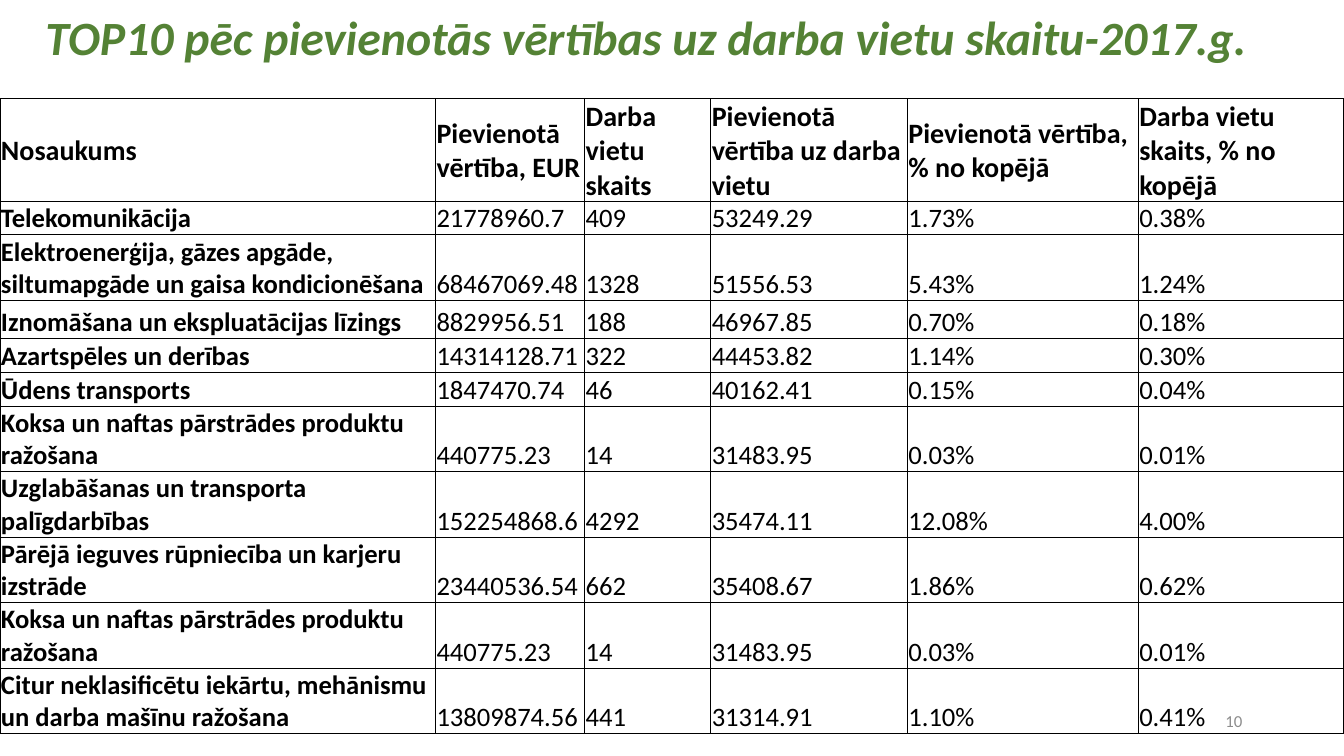
from dataclasses import dataclass

from lxml import etree
from pptx import Presentation
from pptx import util as u
from pptx.dml import color
from pptx.enum import text
from pptx.oxml import ns


@dataclass(frozen=True)
class Theme:
    font: str = "Calibri"
    green: str = "548235"
    black: str = "000000"
    gray: str = "8C8C8C"
    title: float = 34.1
    head: float = 20
    body: float = 19
    page: float = 12


THEME = Theme()
WIDTHS = [4.32, 1.48, 1.25, 1.95, 2.29, 2.04]
HEIGHTS = [1.02, 0.33, 0.65, 0.38, 0.34, 0.33] + [0.65] * 5
HEADS = ["Nosaukums", "Pievienotā vērtība, EUR", "Darba vietu skaits",
         "Pievienotā vērtība uz darba vietu", "Pievienotā vērtība, % no kopējā",
         "Darba vietu skaits, % no kopējā"]
COKE = ["Koksa un naftas pārstrādes produktu ražošana",
        "440775.23", "14", "31483.95", "0.03%", "0.01%"]
SECTORS = [
    ["Telekomunikācija", "21778960.7", "409", "53249.29", "1.73%", "0.38%"],
    ["Elektroenerģija, gāzes apgāde, siltumapgāde un gaisa kondicionēšana",
     "68467069.48", "1328", "51556.53", "5.43%", "1.24%"],
    ["Iznomāšana un ekspluatācijas līzings",
     "8829956.51", "188", "46967.85", "0.70%", "0.18%"],
    ["Azartspēles un derības", "14314128.71", "322", "44453.82", "1.14%", "0.30%"],
    ["Ūdens transports", "1847470.74", "46", "40162.41", "0.15%", "0.04%"],
    COKE,
    ["Uzglabāšanas un transporta palīgdarbības",
     "152254868.6", "4292", "35474.11", "12.08%", "4.00%"],
    ["Pārējā ieguves rūpniecība un karjeru izstrāde",
     "23440536.54", "662", "35408.67", "1.86%", "0.62%"],
    COKE,
    ["Citur neklasificētu iekārtu, mehānismu un darba mašīnu ražošana",
     "13809874.56", "441", "31314.91", "1.10%", "0.41%"],
]


def add_run(para, words, size, tint, bold=False, italic=False):
    run = para.add_run()
    run.text = words
    font = run.font
    font.name, font.size = THEME.font, u.Pt(size)
    font.bold, font.italic = bold, italic
    font.color.rgb = color.RGBColor.from_string(tint)


def add_title(slide, words):
    title = slide.shapes.title
    title.left, title.top = u.Inches(0.35), u.Inches(0.15)
    title.width, title.height = u.Inches(12.39), u.Inches(0.84)
    frame = title.text_frame
    frame.auto_size = text.MSO_AUTO_SIZE.NONE
    frame.vertical_anchor = text.MSO_ANCHOR.TOP
    frame.margin_top = u.Inches(0.08)
    para = frame.paragraphs[0]
    para.alignment = text.PP_ALIGN.JUSTIFY
    para.line_spacing = 0.7
    add_run(para, words, THEME.title, THEME.green, bold=True, italic=True)


def add_page(slide, number):
    box = slide.shapes.add_textbox(
        u.Inches(9.42), u.Inches(6.95), u.Inches(3), u.Inches(0.4))
    frame = box.text_frame
    frame.word_wrap = True
    frame.vertical_anchor = text.MSO_ANCHOR.MIDDLE
    para = frame.paragraphs[0]
    para.alignment = text.PP_ALIGN.RIGHT
    add_run(para, number, THEME.page, THEME.gray)


def add_edges(cell):
    """Draw a thin line on all four sides; lines must precede the fill."""
    props = cell._tc.get_or_add_tcPr()
    for spot, side in enumerate(("lnL", "lnR", "lnT", "lnB")):
        line = etree.Element(ns.qn(f"a:{side}"), w=str(u.Pt(1)))
        fill = etree.SubElement(line, ns.qn("a:solidFill"))
        etree.SubElement(fill, ns.qn("a:srgbClr"), val=THEME.black)
        props.insert(spot, line)


def fill_cell(cell, words, size, bold, anchor):
    cell.margin_left = cell.margin_right = cell.margin_top = u.Inches(0.01)
    cell.margin_bottom = 0
    cell.vertical_anchor = anchor
    cell.fill.background()
    add_edges(cell)
    add_run(cell.text_frame.paragraphs[0], words, size, THEME.black, bold)


def add_grid(slide):
    rows = [HEADS] + SECTORS
    table = slide.shapes.add_table(
        len(rows), len(HEADS), 0, u.Inches(0.98),
        u.Inches(sum(WIDTHS)), u.Inches(sum(HEIGHTS))).table
    table.first_row = table.horz_banding = False
    for col, width in zip(table.columns, WIDTHS):
        col.width = u.Inches(width)
    for r, row in enumerate(rows):
        table.rows[r].height = u.Inches(HEIGHTS[r])
        head = r == 0
        size = THEME.head if head else THEME.body
        anchor = text.MSO_ANCHOR.MIDDLE if head else text.MSO_ANCHOR.BOTTOM
        for c, words in enumerate(row):
            fill_cell(table.cell(r, c), words, size, head or c == 0, anchor)


def main():
    deck = Presentation()
    deck.slide_width, deck.slide_height = u.Inches(13.33), u.Inches(7.5)
    slide = deck.slides.add_slide(deck.slide_layouts.get_by_name("Title Only"))
    add_title(slide, "TOP10 pēc pievienotās vērtības uz darba vietu skaitu-2017.g.")
    add_page(slide, "10")
    add_grid(slide)
    deck.save("out.pptx")


if __name__ == "__main__":
    main()
